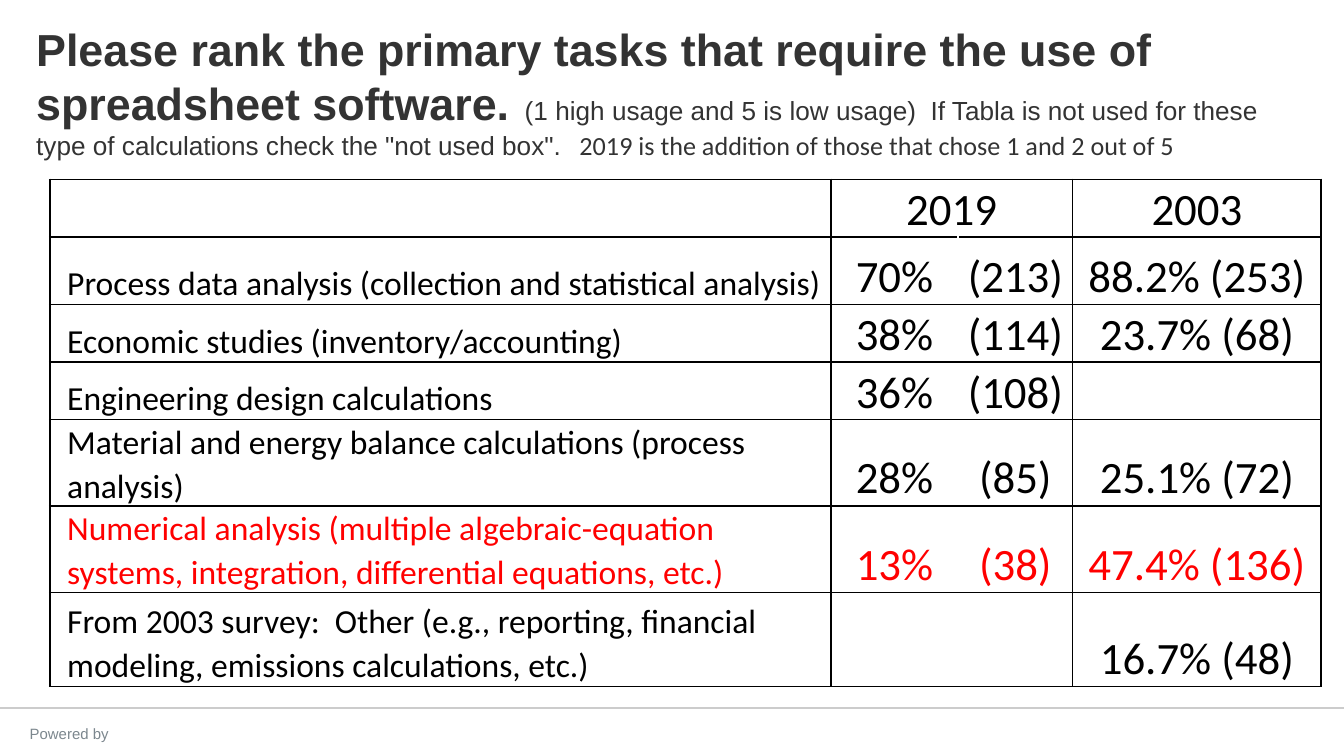
from lxml import etree
from pptx import Presentation
from pptx.dml.color import RGBColor
from pptx.enum.text import MSO_ANCHOR, MSO_AUTO_SIZE, PP_ALIGN
from pptx.oxml.ns import qn
from pptx.util import Cm, Pt

LEFT, CENTER = PP_ALIGN.LEFT, PP_ALIGN.CENTER
TOP, BOTTOM = MSO_ANCHOR.TOP, MSO_ANCHOR.BOTTOM
FIXED = MSO_AUTO_SIZE.NONE

COLORS = {"white": "FFFFFF", "black": "000000", "red": "FF0000",
          "title": "333333", "rule": "CCCCCC", "foot": "7C878E"}

# text, size, font, bold
TITLE = [
    ("Please rank the primary tasks that require the use of spreadsheet software.",
     24, "Arial", True),
    (" ", 16, "Arial", True),
    (" (1 high usage and 5 is low usage)  If Tabla is not used for these type "
     "of calculations check the \"not used box\".", 14, "Arial", False),
    ("   2019 is the addition of those that chose 1 and 2 out of 5",
     14, "Calibri", False),
]
ROWS = [
    ("", "2019", "", "2003"),
    ("Process data analysis (collection and statistical analysis)",
     "70%", "(213)", "88.2% (253)"),
    ("Economic studies (inventory/accounting)", "38%", "(114)", "23.7% (68)"),
    ("Engineering design calculations", "36%", "(108)", ""),
    ("Material and energy balance calculations (process analysis)",
     "28%", "(85)", "25.1% (72)"),
    ("Numerical analysis (multiple algebraic-equation systems, integration, "
     "differential equations, etc.)", "13%", "(38)", "47.4% (136)"),
    ("From 2003 survey:  Other (e.g., reporting, financial modeling, "
     "emissions calculations, etc.)", "", "", "16.7% (48)"),
]
WIDTHS = [14.76, 2.41, 2.16, 4.7]
HEIGHTS = [1.09, 1.27, 1.08, 1.08, 1.63, 1.63, 1.78]
MERGED = (0, 6)
RED_ROW = 5


def rgb(name):
    return RGBColor.from_string(COLORS[name])


def style(run, size, font, color, bold=False):
    run.font.size = Pt(size)
    run.font.name = font
    run.font.bold = bold
    run.font.color.rgb = rgb(color)


def place(shape, box):
    shape.left, shape.top, shape.width, shape.height = map(Cm, box)


def add_title(slide, box):
    title = slide.shapes.title
    place(title, box)
    title.fill.solid()
    title.fill.fore_color.rgb = rgb("white")
    frame = title.text_frame
    frame.word_wrap = True
    frame.auto_size = FIXED
    frame.vertical_anchor = TOP
    para = frame.paragraphs[0]
    para.alignment = LEFT
    for text, size, font, bold in TITLE:
        run = para.add_run()
        run.text = text
        style(run, size, font, "title", bold)


def add_border(cell, sides):
    props = cell._tc.get_or_add_tcPr()
    for side in sides:
        line = etree.SubElement(props, qn("a:ln" + side), w=str(Pt(1)))
        fill = etree.SubElement(line, qn("a:solidFill"))
        etree.SubElement(fill, qn("a:srgbClr"), val=COLORS["black"])


def fill_cell(cell, text, col, color):
    # The percent and count columns share no inner line.
    add_border(cell, {1: "LTB", 2: "RTB"}.get(col, "LRTB"))
    cell.fill.background()
    cell.vertical_anchor = BOTTOM
    cell.margin_left = Cm(0 if col else 0.33)
    cell.margin_right = cell.margin_top = cell.margin_bottom = 0
    if not text:
        return
    cell.text_frame.text = text
    para = cell.text_frame.paragraphs[0]
    para.line_spacing = 1.07
    para.alignment = CENTER if col else LEFT
    style(para.runs[0], 24 if col else 18, "Calibri", color)


def add_ranks(slide, box):
    """Table of tasks with the share and count of answers per survey year."""
    table = slide.shapes.add_table(len(ROWS), len(WIDTHS), *map(Cm, box)).table
    table.first_row = table.horz_banding = False
    for col, width in zip(table.columns, WIDTHS):
        col.width = Cm(width)
    for row, height in zip(table.rows, HEIGHTS):
        row.height = Cm(height)
    for r, texts in enumerate(ROWS):
        color = "red" if r == RED_ROW else "black"
        for c, text in enumerate(texts):
            fill_cell(table.cell(r, c), text, c, color)
    for r in MERGED:
        table.cell(r, 1).merge(table.cell(r, 2))


def add_footer(slide, box):
    left, top, width, _ = box
    line = slide.shapes.add_connector(1, Cm(left), Cm(top), Cm(left + width), Cm(top))
    line.line.color.rgb = rgb("rule")
    line.line.width = Pt(1)
    etree.SubElement(line._element.spPr, qn("a:effectLst"))
    label = slide.shapes.add_textbox(Cm(left - 0.15), Cm(top + 0.18), Cm(2.92), Cm(0.46))
    frame = label.text_frame
    frame.word_wrap = True
    frame.text = "Powered by"
    para = frame.paragraphs[0]
    para.alignment = CENTER
    style(para.runs[0], 8, "Arial", "foot")


def main():
    deck = Presentation()
    deck.slide_width, deck.slide_height = Cm(25.4), Cm(14.28)
    slide = deck.slides.add_slide(deck.slide_layouts[5])
    add_footer(slide, (0, 13.38, 25.4, 0.9))
    add_title(slide, (0.43, 0.28, 24.54, 2.9))
    add_ranks(slide, (0.94, 3.39, sum(WIDTHS), sum(HEIGHTS)))
    deck.save("out.pptx")


if __name__ == "__main__":
    main()
